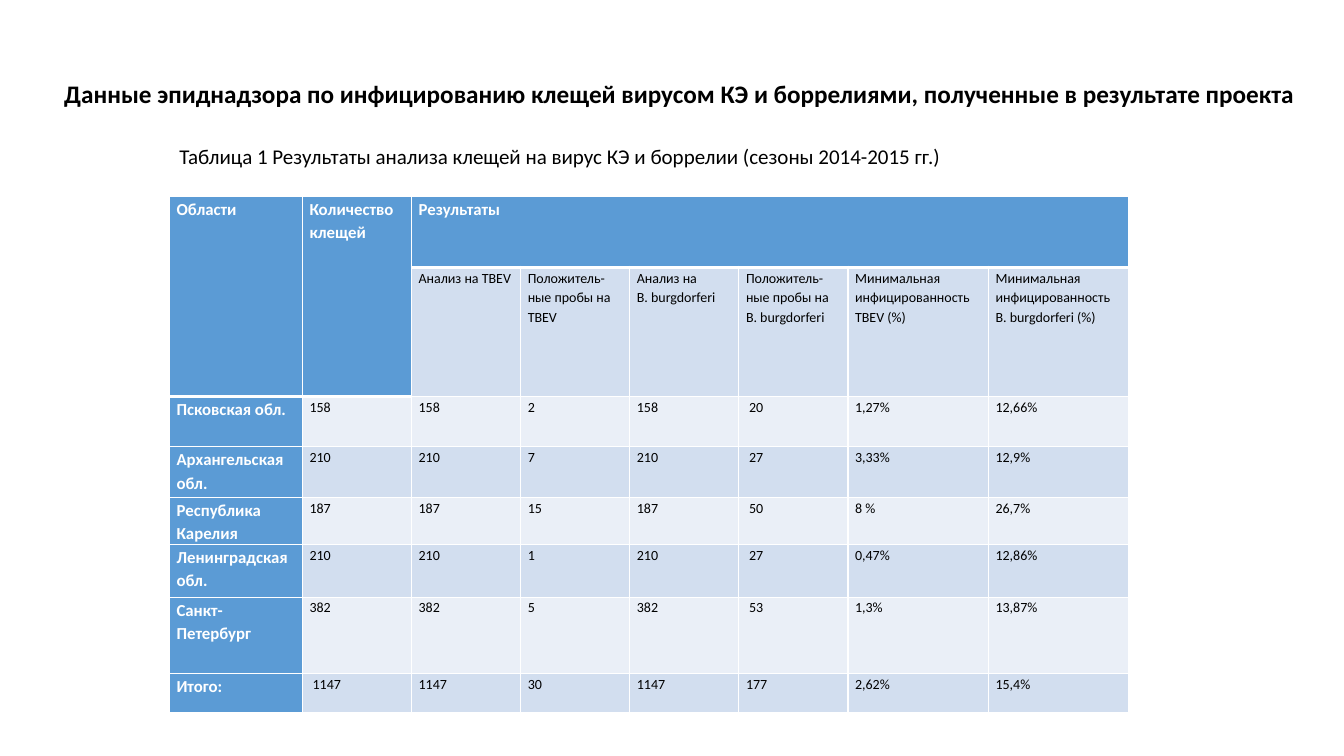
"""Build the slide on tick infection surveillance with its results table."""
from lxml import etree
from pptx import Presentation
from pptx import util as u
from pptx.dml.color import RGBColor
from pptx.enum import text
from pptx.oxml.ns import qn

COLOURS = {"header": "5B9BD5", "dark_band": "D2DEEF", "light_band": "EAEFF7",
           "white": "FFFFFF", "black": "000000"}
FONT = "Calibri"

HEADING = ("Данные эпиднадзора по инфицированию клещей вирусом КЭ и боррелиями, "
           "полученные в результате проекта")
CAPTION = "Таблица 1 Результаты анализа клещей на вирус КЭ и боррелии (сезоны 2014-2015 гг.)"
RESULTS = [
    ("Области", "Количество клещей", "Результаты", "", "", "", "", ""),
    ("", "", "Анализ на TBEV", "Положитель-ные пробы на TBEV",
     "Анализ на \vB. burgdorferi", "Положитель-ные пробы на B. burgdorferi",
     "Минимальная инфицированность TBEV (%)",
     "Минимальная инфицированность B. burgdorferi (%)"),
    ("Псковская обл.", "158", "158", "2", "158", " 20", "1,27%", "12,66%"),
    ("Архангельская\vобл.", "210", "210", "7", "210", " 27", "3,33%", "12,9%"),
    ("Республика Карелия", "187", "187", "15", "187", " 50", "8 %", "26,7%"),
    ("Ленинградская обл.", "210", "210", "1", "210", " 27", "0,47%", "12,86%"),
    ("Санкт-Петербург", "382", "382", "5", "382", " 53", "1,3%", "13,87%"),
    ("Итого:", " 1147", "1147", "30", "1147", "177", "2,62%", "15,4%"),
]
MERGES = [((0, 0), (1, 0)), ((0, 1), (1, 1)), ((0, 2), (0, 7))]
COLUMN_WIDTHS = [3.35] + [2.75] * 5 + [3.54] * 2
ROW_HEIGHTS = [1.8, 3.25, 1.27, 1.27, 0.89, 1.33, 1.93, 0.99]
TABLE_LEFT, TABLE_TOP = 4.27, 4.94
CELL_FORMAT = {"margin_left": u.Cm(0.18), "margin_right": u.Cm(0.18),
               "margin_top": 0, "margin_bottom": 0}


def style(paragraph, size, colour, bold):
    for name, value in {"name": FONT, "size": u.Pt(size), "bold": bold}.items():
        setattr(paragraph.font, name, value)
    paragraph.font.color.rgb = RGBColor.from_string(COLOURS[colour])


def add_line(slide, wording, box, size, bold, wrap, anchor):
    frame = slide.shapes.add_textbox(*map(u.Cm, box)).text_frame
    frame.text = wording
    for name, value in {"word_wrap": wrap, "vertical_anchor": anchor,
                        "auto_size": text.MSO_AUTO_SIZE.SHAPE_TO_FIT_TEXT}.items():
        setattr(frame, name, value)
    style(frame.paragraphs[0], size, "black", bold)


def add_borders(cell, widths):
    for edge, width in widths.items():
        line = etree.SubElement(cell._tc.get_or_add_tcPr(), qn(f"a:ln{edge}"), w=str(u.Pt(width)))
        fill = etree.SubElement(line, qn("a:solidFill"))
        etree.SubElement(fill, qn("a:srgbClr"), val=COLOURS["white"])


def format_cell(cell, row, column, wording):
    last_header_row = 1 if column < 2 else 0
    is_header = row <= last_header_row or column == 0
    band = "light_band" if row % 2 == 0 else "dark_band"
    add_borders(cell, {"L": 1, "R": 1, "T": 3 if row == last_header_row + 1 else 1,
                       "B": 3 if row <= last_header_row else 1})
    cell.fill.solid()
    cell.fill.fore_color.rgb = RGBColor.from_string(COLOURS["header" if is_header else band])
    for name, value in CELL_FORMAT.items():
        setattr(cell, name, value)
    cell.text_frame.text = wording
    paragraph = cell.text_frame.paragraphs[0]
    paragraph.line_spacing = 1.15
    style(paragraph, 12 if is_header else 10, "white" if is_header else "black", is_header)


def add_results(slide):
    table = slide.shapes.add_table(
        len(ROW_HEIGHTS), len(COLUMN_WIDTHS), u.Cm(TABLE_LEFT), u.Cm(TABLE_TOP),
        u.Cm(sum(COLUMN_WIDTHS)), u.Cm(sum(ROW_HEIGHTS))).table
    for column, width in zip(table.columns, COLUMN_WIDTHS):
        column.width = u.Cm(width)
    for row, height in zip(table.rows, ROW_HEIGHTS):
        row.height = u.Cm(height)
    for row, wordings in enumerate(RESULTS):
        for column, wording in enumerate(wordings):
            format_cell(table.cell(row, column), row, column, wording)
    for first, last in MERGES:
        table.cell(*first).merge(table.cell(*last))


def main():
    deck = Presentation()
    deck.slide_width, deck.slide_height = u.Cm(33.87), u.Cm(19.05)
    slide = deck.slides.add_slide(deck.slide_layouts[6])
    add_results(slide)
    add_line(slide, HEADING, (1.37, 1.85, 31.95, 1.02), 18, True, False, text.MSO_ANCHOR.MIDDLE)
    add_line(slide, CAPTION, (TABLE_LEFT, 3.48, 19.8, 0.89), 15, False, True, text.MSO_ANCHOR.TOP)
    deck.save("out.pptx")


if __name__ == "__main__":
    main()
